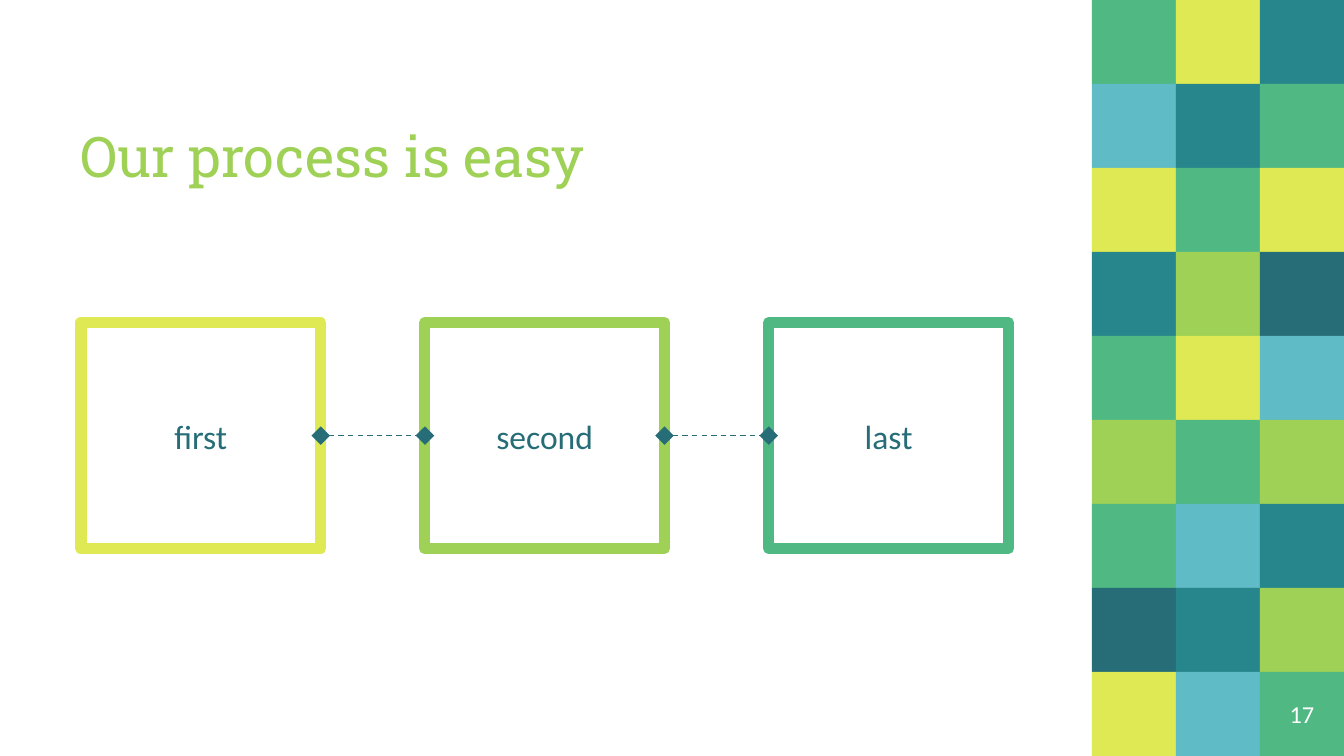
import itertools

import pptx
import pptx.dml.color
import pptx.enum.dml
import pptx.enum.shapes
import pptx.enum.text
import pptx.oxml
import pptx.oxml.ns
import pptx.util
from pptx.util import Cm

RGBColor = pptx.dml.color.RGBColor
Align = pptx.enum.text.PP_ALIGN
Anchor = pptx.enum.text.MSO_ANCHOR
RECTANGLE = pptx.enum.shapes.MSO_SHAPE.RECTANGLE

LIME = RGBColor(0x9E, 0xD1, 0x55)
YELLOW = RGBColor(0xDF, 0xE9, 0x54)
GREEN = RGBColor(0x50, 0xB8, 0x83)
TEAL = RGBColor(0x27, 0x86, 0x8B)
SKY = RGBColor(0x5F, 0xBB, 0xC5)
PETROL = RGBColor(0x26, 0x6D, 0x78)
WHITE = RGBColor(0xFF, 0xFF, 0xFF)

SLIDE_WIDTH, SLIDE_HEIGHT = Cm(25.4), Cm(14.29)

# Mosaic rows from top to bottom
MOSAIC = [
    (GREEN, YELLOW, TEAL),
    (SKY, TEAL, GREEN),
    (YELLOW, GREEN, YELLOW),
    (TEAL, LIME, PETROL),
    (GREEN, YELLOW, SKY),
    (LIME, GREEN, LIME),
    (GREEN, SKY, TEAL),
    (PETROL, TEAL, LIME),
    (YELLOW, SKY, GREEN),
]
TILE = SLIDE_HEIGHT // len(MOSAIC)

STEPS = [("first", YELLOW), ("second", LIME), ("last", GREEN)]
STEP_LEFT, STEP_TOP = 1.53, 6.1
STEP_WIDTH, STEP_HEIGHT = 4.53, 4.27
STEP_PITCH = 6.5


def write_text(shape, text, font_name, size, color, align, anchor):
    frame = shape.text_frame
    frame.word_wrap = True
    frame.vertical_anchor = anchor
    frame.margin_left = frame.margin_right = Cm(0.25)
    frame.margin_top = frame.margin_bottom = Cm(0.25)
    paragraph = frame.paragraphs[0]
    paragraph.text = text
    paragraph.alignment = align
    paragraph.font.name = font_name
    paragraph.font.size = pptx.util.Pt(size)
    paragraph.font.color.rgb = color


def add_tile(slide, row, column, color):
    left = SLIDE_WIDTH - (len(MOSAIC[row]) - column) * TILE
    tile = slide.shapes.add_shape(RECTANGLE, left, row * TILE, TILE, TILE)
    tile.shadow.inherit = False
    tile.fill.solid()
    tile.fill.fore_color.rgb = color
    tile.line.fill.background()


def add_step(slide, index, text, color):
    step = slide.shapes.add_shape(
        RECTANGLE, Cm(STEP_LEFT + index * STEP_PITCH), Cm(STEP_TOP),
        Cm(STEP_WIDTH), Cm(STEP_HEIGHT))
    step.shadow.inherit = False
    step.fill.background()
    step.line.color.rgb = color
    step.line.width = pptx.util.Pt(6)
    write_text(step, text, "Calibri", 18, PETROL, Align.CENTER, Anchor.MIDDLE)
    return step


def join_steps(slide, start, end):
    connector = slide.shapes.add_connector(
        pptx.enum.shapes.MSO_CONNECTOR.STRAIGHT, 0, 0, 0, 0)
    connector.begin_connect(start, 3)
    connector.end_connect(end, 1)
    connector.line.color.rgb = PETROL
    connector.line.width = pptx.util.Pt(0.75)
    connector.line.dash_style = pptx.enum.dml.MSO_LINE.DASH

    # Diamond ends, no shadow
    outline = connector.line._get_or_add_ln()
    for tag in ("headEnd", "tailEnd"):
        outline.append(pptx.oxml.parse_xml(
            f'<a:{tag} {pptx.oxml.ns.nsdecls("a")} '
            'type="diamond" w="lg" len="lg"/>'))
    connector._element.spPr.append(pptx.oxml.parse_xml(
        f'<a:effectLst {pptx.oxml.ns.nsdecls("a")}/>'))


def main():
    presentation = pptx.Presentation()
    presentation.slide_width = SLIDE_WIDTH
    presentation.slide_height = SLIDE_HEIGHT
    slide = presentation.slides.add_slide(presentation.slide_layouts[6])

    # Mosaic on the right
    for row, colors in enumerate(MOSAIC):
        for column, color in enumerate(colors):
            add_tile(slide, row, column, color)

    # Title
    title = slide.shapes.add_textbox(Cm(1.27), Cm(1.43), Cm(17.8), Cm(2.38))
    write_text(title, "Our process is easy", "Roboto Slab", 30, LIME,
               Align.LEFT, Anchor.BOTTOM)

    # Page number on the last tile
    number = slide.shapes.add_textbox(
        SLIDE_WIDTH - TILE, SLIDE_HEIGHT - TILE, TILE, TILE)
    write_text(number, "17", "Calibri", 13, WHITE, Align.CENTER, Anchor.MIDDLE)

    # Process steps and their links
    steps = [add_step(slide, index, text, color)
             for index, (text, color) in enumerate(STEPS)]
    for start, end in itertools.pairwise(steps):
        join_steps(slide, start, end)

    presentation.save("out.pptx")


if __name__ == "__main__":
    main()
